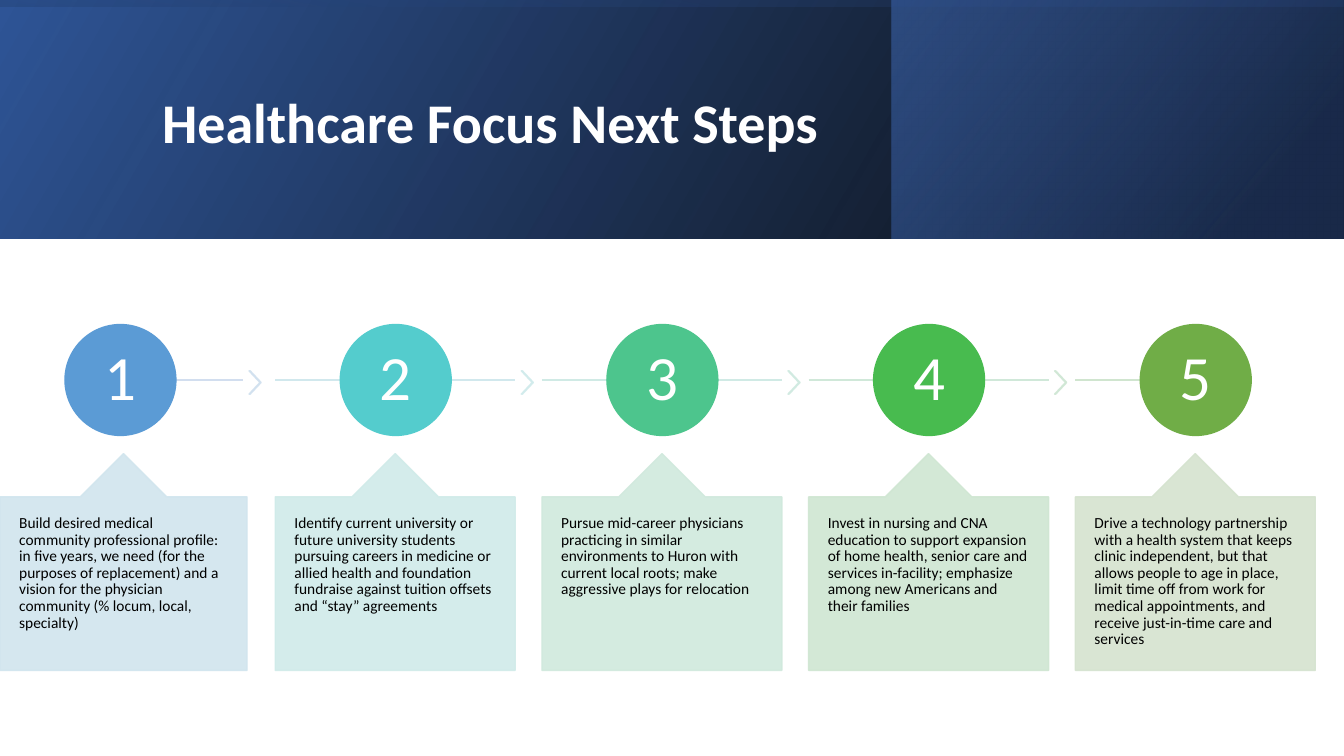
from lxml import etree
from pptx import Presentation
from pptx.dml.color import RGBColor
from pptx.enum import shapes, text
from pptx.oxml import parse_xml
from pptx.oxml.ns import nsdecls, qn
from pptx.util import Inches, Pt

HUES = {
    "white": "FFFFFF", "black": "000000", "navy": "203864", "blue": "2F5597", "sky": "4472C4",
    "disc": ["5B9BD5", "54CCCD", "4DC58D", "48BB4F", "70AD47"],
    "line": ["D2DEEF", "D1E8ED", "D0EAE5", "D0E8D9", "D0E5CF"],
    "tip": ["D1E1EF", "D1EBEC", "D0EAE1", "D0E7D5"],
    "card": ["D1E5EE", "D0EBE9", "D0E9DD", "CFE6D2", "D5E3CF"],
}
STEPS = [
    "Build desired medical community professional profile: in five years, we need (for the purposes of "
    "replacement) and a vision for the physician community (% locum, local, specialty)",
    "Identify current university or future university students pursuing careers in medicine or allied health "
    "and foundation fundraise against tuition offsets and “stay” agreements",
    "Pursue mid-career physicians practicing in similar environments to Huron with current local roots; "
    "make aggressive plays for relocation",
    "Invest in nursing and CNA education to support expansion of home health, senior care and services "
    "in-facility; emphasize among new Americans and their families",
    "Drive a technology partnership with a health system that keeps clinic independent, but that allows people "
    "to age in place, limit time off from work for medical appointments, and receive just-in-time care and services",
]
WIDE, HIGH, BAND = 13.33, 7.5, 2.37
MID = shapes.MSO_SHAPE

deck = Presentation()
deck.slide_width, deck.slide_height = Inches(WIDE), Inches(HIGH)
slide = deck.slides.add_slide(deck.slide_layouts[6])
tree = slide.shapes


def draw(kind, box, hue, clear=False):
    item = tree.add_shape(kind, *map(Inches, box))
    item.shadow.inherit = False
    item.fill.solid()
    item.fill.fore_color.rgb = item.line.color.rgb = RGBColor.from_string(hue)
    item.line.width = Pt(1)
    if clear:
        for tint in item._element.spPr.iter(qn("a:srgbClr")):
            etree.SubElement(tint, qn("a:alpha")).set("val", "90000")
    return item


def write(item, words, size, hue, inset, bold=False, align=None, anchor=text.MSO_ANCHOR.MIDDLE):
    frame = item.text_frame
    frame.text = words
    frame.word_wrap = True
    frame.vertical_anchor = anchor
    frame.margin_left = frame.margin_right = Inches(inset[0])
    frame.margin_top = frame.margin_bottom = Inches(inset[1])
    para = frame.paragraphs[0]
    para.alignment = align or text.PP_ALIGN.LEFT
    para.line_spacing = 0.9
    font = para.runs[0].font
    font.name, font.size, font.bold = "Calibri", Pt(size), bold
    font.color.rgb = RGBColor.from_string(hue)


half = (WIDE - BAND) / 2
bands = [
    ((0, 0, WIDE, BAND), 0, 330, [(0, "black", 96), (100, "blue", 100)]),
    ((8.84, 0, 4.48, BAND), 0, 320, [(19, "navy", 68), (100, "sky", 48)]),
    ((half, -half, BAND, WIDE), 270, 350, [(23, "blue", 16), (99, "black", 45)]),
]
for box, turn, angle, stops in bands:
    band = draw(MID.RECTANGLE, box, HUES["blue"])
    band.line.fill.background()
    band.rotation = turn
    props = band._element.spPr
    props.find(qn("a:xfrm")).set("flipH", "1")
    marks = "".join(
        f'<a:gs pos="{pos * 1000}"><a:srgbClr val="{HUES[hue]}"><a:alpha val="{alpha * 1000}"/></a:srgbClr></a:gs>'
        for pos, hue, alpha in stops)
    blend = parse_xml(f'<a:gradFill {nsdecls("a")} rotWithShape="1"><a:gsLst>{marks}</a:gsLst>'
                      f'<a:lin ang="{angle * 60000}" scaled="0"/></a:gradFill>')
    props.replace(props.find(qn("a:solidFill")), blend)

title = tree.add_textbox(*map(Inches, (1.51, 0.38, 10.63, 1.72)))
write(title, "Healthcare Focus Next Steps", 40, HUES["white"], (0.1, 0.05), bold=True)

last = len(STEPS) - 1
for i, step in enumerate(STEPS):
    left = 2.73 + 2.645 * (i - 1) if i else 0
    width = 2.38 if i else 2.45
    start = left if i else 1.34
    end = left + width / 2 if i == last else left + width if i else 2.41

    line = tree.add_connector(shapes.MSO_CONNECTOR.STRAIGHT, *map(Inches, (start, 3.77, end, 3.77)))
    line.line.color.rgb = RGBColor.from_string(HUES["line"][i])
    line.line.width = Pt(1)
    etree.SubElement(line._element.spPr, qn("a:effectLst"))

    if i < last:
        tip = draw(MID.CHEVRON, (end + 0.06, 3.68, 0.12, 0.23), HUES["tip"][i], True)
        tip.adjustments[0] = 0.9

    disc = draw(MID.OVAL, (left + 0.645, 3.22, 1.1, 1.1), HUES["disc"][i])
    write(disc, str(i + 1), 45, HUES["white"], (0.04, 0.04), align=text.PP_ALIGN.CENTER)

    card = draw(MID.UP_ARROW_CALLOUT, (left, 4.5, width, 2.15), HUES["card"][i], True)
    for k, share in enumerate((0.5, 0.2, 0.2, 1)):
        card.adjustments[k] = share
    write(card, step, 11, HUES["black"], (0.19, 0.18), anchor=text.MSO_ANCHOR.TOP)

deck.save("out.pptx")
